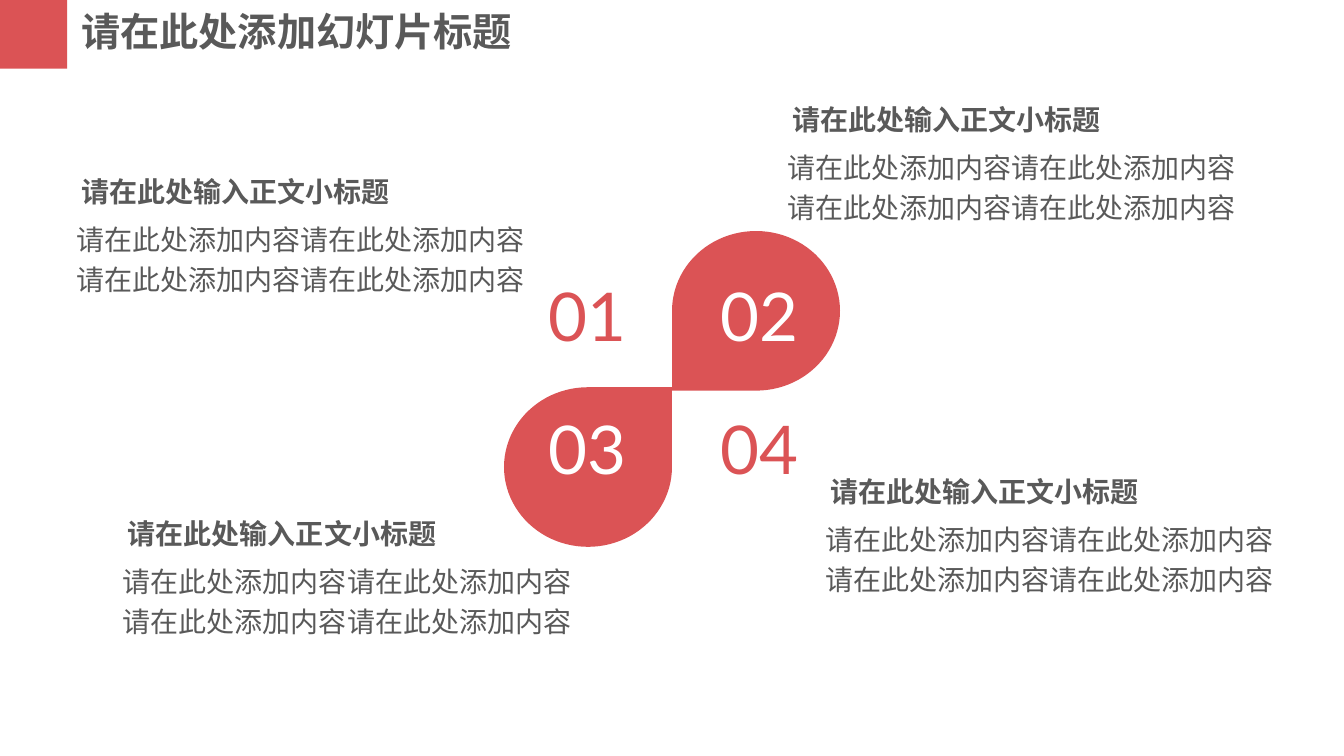
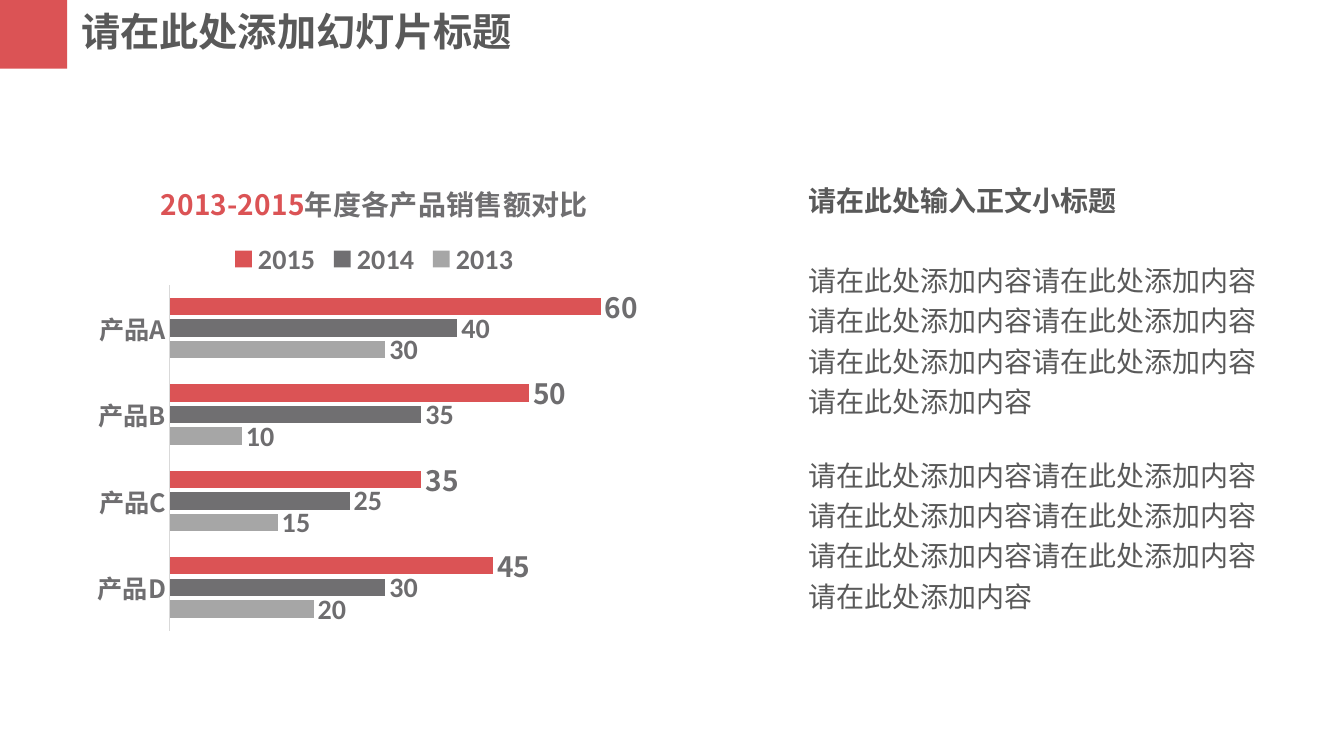
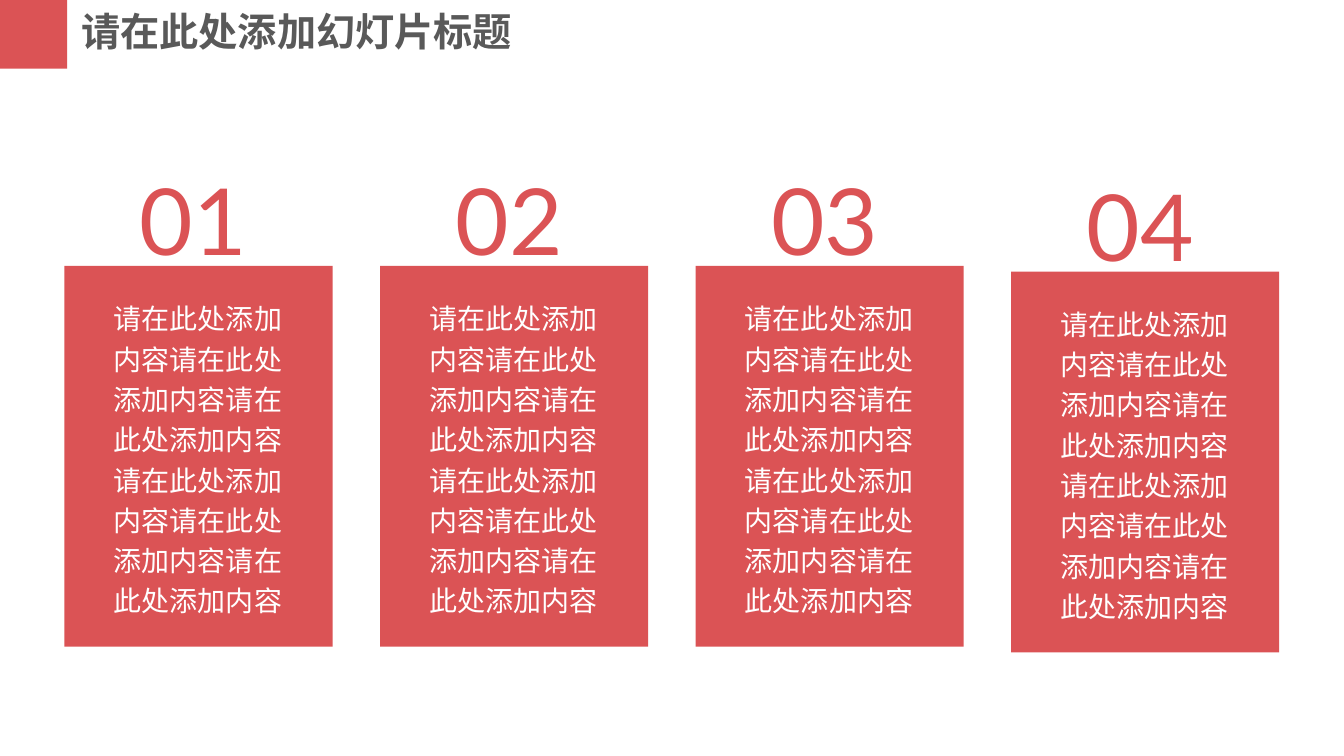
"""Build three red-accented slides: petals, sales chart and number cards."""
from lxml import etree
from pptx import Presentation
from pptx.chart.data import CategoryChartData
from pptx.dml.color import RGBColor
from pptx.enum import chart as charts, shapes, text
from pptx.oxml.ns import qn
from pptx.util import Pt

COLORS = {"red": "DB5355", "text": "595959", "white": "FFFFFF", "title": "6F6E70",
          "label": "6E6D6F", "dark": "706F71", "light": "A6A6A6", "axis": "D9D9D9"}
CJK, NUMBER, CHART = "Noto Sans CJK SC", "Lato", "Calibri"
HEADING = "请在此处输入正文小标题"
CONTENT = "请在此处添加内容"
TEXT_WIDTH = 343.4


def rgb(color):
    """Return the named colour."""
    return RGBColor.from_string(COLORS[color])


def set_font(font, size, color, name=CJK, bold=False):
    """Set size, colour and typeface for Latin and East Asian text."""
    font.size, font.bold, font.name = Pt(size), bold, name
    font.color.rgb = rgb(color)
    etree.SubElement(font._rPr, qn("a:ea"), typeface=name)


def add_text(parent, box, lines, size=20, color="text", name=CJK, bold=False, spacing=1.2):
    """Place a wrapped text box with one paragraph per line."""
    frame = parent.shapes.add_textbox(*map(Pt, box)).text_frame
    frame.word_wrap = True
    frame.auto_size = text.MSO_AUTO_SIZE.SHAPE_TO_FIT_TEXT
    frame.text = "\n".join(lines)
    for paragraph in frame.paragraphs:
        paragraph.line_spacing = spacing
        set_font(paragraph.font, size, color, name, bold)


def add_red(parent, kind, box, rotation=0):
    """Place a red shape without outline."""
    shape = parent.shapes.add_shape(kind, *map(Pt, box))
    shape.shadow.inherit = False
    shape.fill.solid()
    shape.fill.fore_color.rgb = rgb("red")
    shape.line.fill.background()
    shape.rotation = rotation


def add_slide(deck):
    """Add a slide with the shared corner square and title."""
    slide = deck.slides.add_slide(deck.slide_layouts[6])
    add_red(slide, shapes.MSO_SHAPE.RECTANGLE, (0, 0, 48, 49))
    add_text(slide, (51, 2, 353, 41), ["请在此处添加幻灯片标题"], 28, bold=True, spacing=1)
    return slide


def add_topic(slide, left, top):
    """Place a heading with its body below, from the heading's corner."""
    add_text(slide, (left, top, TEXT_WIDTH, 36), [HEADING], bold=True)
    add_text(slide, (left - 3.6, top + 34.1, TEXT_WIDTH, 65), [CONTENT * 4])


def add_petals(slide, center, middle):
    """Place two petals meeting at a point and the four numbers around it."""
    width, height = 120, 114
    petal = shapes.MSO_SHAPE.TEAR
    add_red(slide, petal, (center, middle - height + 1.2, width, height), 180)
    add_red(slide, petal, (center - width, middle - 1.2, width, height))
    for index, color in enumerate(("red", "white", "white", "red")):
        row, column = divmod(index, 2)
        box = (center - 95.5 + 123.1 * column, middle - 85.6 + 95.1 * row, 96, 122)
        add_text(slide, box, [f"{index + 1:02}"], 48, color, NUMBER, spacing=1)


def set_layout(chart, part, position, x, y, w=None, h=None):
    """Fix a chart part at fractions of the chart's box."""
    element = chart._chartSpace.xpath(f".//c:{part}")[0]
    for old in element.findall(qn("c:layout")):
        element.remove(old)
    layout = etree.Element(qn("c:layout"))
    element.insert(position, layout)
    manual = etree.SubElement(layout, qn("c:manualLayout"))
    values = {"xMode": "edge", "yMode": "edge", "x": x, "y": y}
    if w:
        values = {"layoutTarget": "inner", **values, "w": w, "h": h}
    for tag, value in values.items():
        etree.SubElement(manual, qn(f"c:{tag}"), val=str(value))


def add_sales_chart(slide, box):
    """Place the clustered bar chart of sales by product."""
    data = CategoryChartData()
    data.categories = ["产品D", "产品C", "产品B", "产品A"]
    data.add_series("2013", (20, 15, 10, 30))
    data.add_series("2014", (30, 25, 35, 40))
    data.add_series("2015", (45, 35, 50, 60))
    chart = slide.shapes.add_chart(charts.XL_CHART_TYPE.BAR_CLUSTERED, *map(Pt, box), data).chart
    chart.font.name, chart.font.size = CHART, Pt(10)

    title = chart.chart_title.text_frame.paragraphs[0]
    for words, color in (("2013-2015", "red"), ("年度各产品销售额对比", "title")):
        run = title.add_run()
        run.text = words
        set_font(run.font, 20, color, bold=True)
    set_layout(chart, "title", 1, 0.15, 0.04)

    chart.has_legend = True
    chart.legend.position = charts.XL_LEGEND_POSITION.TOP
    chart.legend.include_in_layout = False
    set_font(chart.legend.font, 20, "label", CHART, True)
    set_layout(chart, "legend", 1, 0.26, 0.16)

    products, sales = chart.category_axis, chart.value_axis
    products.major_tick_mark = charts.XL_TICK_MARK.NONE
    products.format.line.color.rgb = rgb("axis")
    products.format.line.width = Pt(0.75)
    set_font(products.tick_labels.font, 18, "title", bold=True)
    sales.visible = sales.has_major_gridlines = False
    sales.minimum_scale, sales.maximum_scale = 0, 70

    plot = chart.plots[0]
    plot.gap_width, plot.overlap, plot.vary_by_categories = 150, -25, False
    styles = (("light", CHART), ("dark", CHART), ("red", CJK))
    for year, (color, name) in zip(plot.series, styles):
        year.format.fill.solid()
        year.format.fill.fore_color.rgb = rgb(color)
        labels = year.data_labels
        labels.show_value = True
        labels.position = charts.XL_LABEL_POSITION.OUTSIDE_END
        set_font(labels.font, 20, "label", name, True)
    set_layout(chart, "plotArea", 0, 0.17, 0.26, 0.81, 0.71)


def add_notes_column(slide, left, top):
    """Place a heading above two blocks of body text."""
    add_text(slide, (left, top, TEXT_WIDTH, 36), [HEADING], bold=True)
    for offset in (57.6, 196.6):
        add_text(slide, (left, top + offset, TEXT_WIDTH, 122), [CONTENT * 4, CONTENT * 3])


def add_card(slide, left, top, number):
    """Place a grouped red card with its number above."""
    card = slide.shapes.add_group_shape()
    add_text(card, (left + 46.8, top - 77, 111, 166), [f"{number:02}"], 66, "red", NUMBER, spacing=1)
    add_red(card, shapes.MSO_SHAPE.RECTANGLE, (left, top, 191.5, 272))
    add_text(card, (left + 28.1, top + 17.2, 135.4, 237.6), [CONTENT * 6], color="white")


def main():
    """Build and save the deck."""
    deck = Presentation()
    deck.slide_width, deck.slide_height = Pt(960), Pt(540)

    petals = add_slide(deck)
    add_petals(petals, 480, 277.8)
    for left, top in ((51, 116.5), (558.7, 64.8), (84.2, 360.7), (586, 330.6)):
        add_topic(petals, left, top)

    sales = add_slide(deck)
    add_sales_chart(sales, (46, 113, 443.5, 348))
    add_notes_column(sales, 570.2, 122.4)

    cards = add_slide(deck)
    for index, top in enumerate((190, 190, 190, 194)):
        add_card(cards, 46.1 + 225.4 * index, top, index + 1)

    deck.save("out.pptx")


if __name__ == "__main__":
    main()
